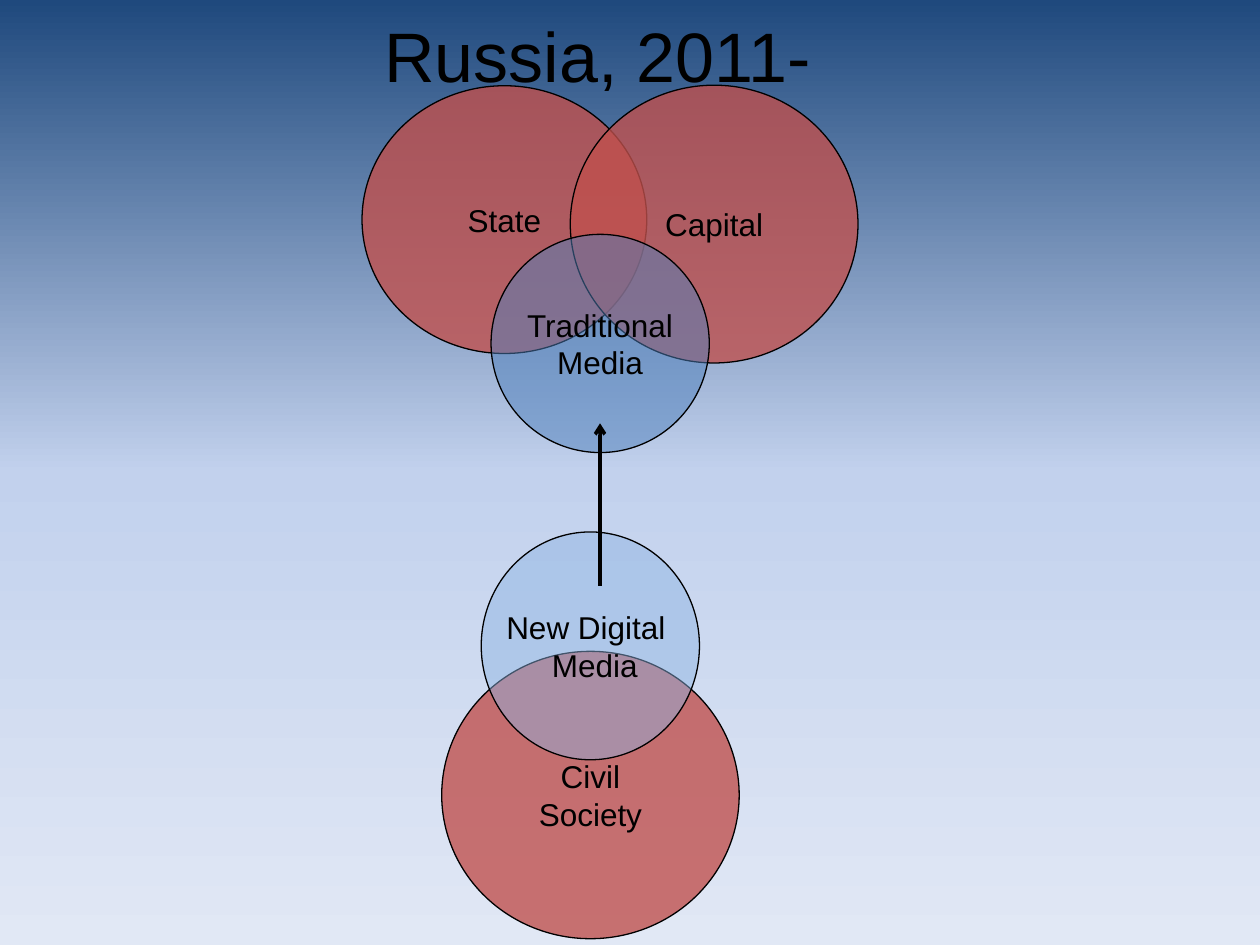
"""Build a slide of overlapping circles on state, capital, media and civil society in Russia."""
from copy import deepcopy

from pptx import Presentation
from pptx.dml.color import RGBColor
from pptx.enum.shapes import MSO_CONNECTOR, MSO_SHAPE
from pptx.enum.text import MSO_ANCHOR, MSO_AUTO_SIZE, PP_ALIGN
from pptx.oxml.ns import qn
from pptx.oxml.xmlchemy import OxmlElement
from pptx.util import Pt

OVAL = MSO_SHAPE.OVAL
STRAIGHT = MSO_CONNECTOR.STRAIGHT
MIDDLE = MSO_ANCHOR.MIDDLE
CENTER = PP_ALIGN.CENTER
GROW = MSO_AUTO_SIZE.SHAPE_TO_FIT_TEXT

BLACK = RGBColor(0x00, 0x00, 0x00)
RED = RGBColor(0xC0, 0x50, 0x4D)
BLUE = RGBColor(0x4F, 0x81, 0xBD)
LIGHT_BLUE = RGBColor(0x8E, 0xB4, 0xE3)
SKY = [
    (0, RGBColor(0x1F, 0x49, 0x7D)),
    (0.5, RGBColor(0xC2, 0xD1, 0xED)),
    (1, RGBColor(0xE1, 0xE8, 0xF5)),
]
FONT = "Arial"

CIRCLES = [
    (["State"], (206.9, 49, 162.7, 153), RED, 80),
    (["Capital"], (325.9, 48.7, 164.4, 158.7), RED, 79),
    (["Traditional", "Media"], (280.6, 133.9, 124.7, 124.7), BLUE, 50),
    (["Civil", "Society"], (252.4, 372.2, 170, 164.2), RED, 79),
    (["New Digital ", " Media"], (275, 304, 124.7, 130.2), LIGHT_BLUE, 47),
]


def paint_background(slide):
    fill = slide.background.fill
    fill.gradient()
    fill.gradient_angle = 270
    stop_list = next(slide.element.iter(qn("a:gsLst")))
    stop_list.append(deepcopy(stop_list[-1]))
    for stop, (position, color) in zip(fill.gradient_stops, SKY):
        stop.position = position
        stop.color.rgb = color


def add_words(paragraph, words, size):
    run = paragraph.add_run()
    run.text = words
    run.font.name = FONT
    run.font.size = Pt(size)
    run.font.color.rgb = BLACK


def set_opacity(shape, percent):
    alpha = OxmlElement("a:alpha")
    alpha.set("val", str(percent * 1000))
    shape.fill._xPr.find(qn("a:solidFill"))[0].append(alpha)


def add_circle(slide, lines, box, color, opacity):
    circle = slide.shapes.add_shape(OVAL, *map(Pt, box))
    circle.shadow.inherit = False
    circle.fill.solid()
    circle.fill.fore_color.rgb = color
    set_opacity(circle, opacity)
    circle.line.color.rgb = BLACK
    circle.line.width = Pt(0.75)
    label = circle.text_frame
    label.word_wrap = False
    label.vertical_anchor = MIDDLE
    for index, words in enumerate(lines):
        paragraph = label.add_paragraph() if index else label.paragraphs[0]
        paragraph.alignment = CENTER
        add_words(paragraph, words, 18)


def add_title(slide, words, box):
    title = slide.shapes.add_textbox(*map(Pt, box)).text_frame
    title.word_wrap = True
    title.auto_size = GROW
    add_words(title.paragraphs[0], words, 40)


def add_arrow(slide, start, end):
    arrow = slide.shapes.add_connector(STRAIGHT, *map(Pt, start + end))
    arrow.line.color.rgb = BLACK
    arrow.line.width = Pt(2)
    tip = OxmlElement("a:tailEnd")
    tip.set("type", "arrow")
    arrow.line._get_or_add_ln().append(tip)
    arrow.element.spPr.append(OxmlElement("a:effectLst"))


def main():
    deck = Presentation()
    deck.slide_width, deck.slide_height = Pt(720), Pt(540)
    slide = deck.slides.add_slide(deck.slide_layouts[6])
    paint_background(slide)
    for circle in CIRCLES:
        add_circle(slide, *circle)
    add_title(slide, "Russia, 2011-", (212.6, 3.8, 272, 55.7))
    add_arrow(slide, (342.9, 334.8), (342.9, 241.9))
    deck.save("out.pptx")


if __name__ == "__main__":
    main()
